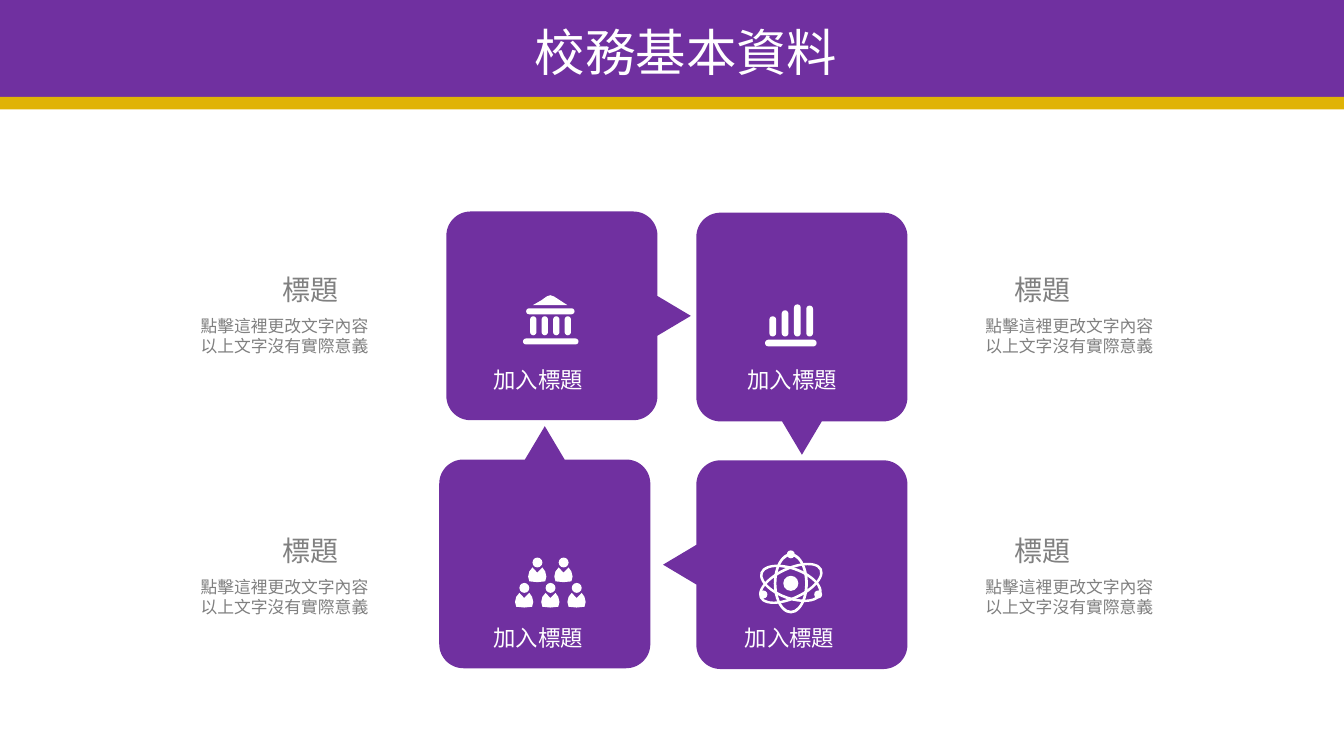
import math
from pptx import Presentation
from pptx import util as u
from pptx.dml.color import RGBColor
from pptx.enum import shapes, text
from pptx.oxml.ns import qn

PURPLE, GOLD, WHITE, GREY = "7030A0", "E0B305", "FFFFFF", "808080"
FONT = "Noto Sans CJK SC"
KIND = shapes.MSO_SHAPE
TILE_W, TILE_H, CORNER = 5.32, 5.26, 0.61
POINTER_LENGTH, POINTER_HALF = 0.84, 0.5
SIDES = ("up", "right", "down", "left")


def paint(shape, color):
    shape.shadow.inherit = False
    shape.fill.solid()
    shape.fill.fore_color.rgb = RGBColor.from_string(color)
    shape.line.fill.background()


def add_preset(slide, kind, x, y, w, h, color=WHITE, adjust=None, turn=0):
    shape = slide.shapes.add_shape(kind, u.Cm(x), u.Cm(y), u.Cm(w), u.Cm(h))
    paint(shape, color)
    if adjust is not None:
        shape.adjustments[0] = adjust
    shape.rotation = turn


def add_pill(slide, x, y, w, h):
    add_preset(slide, KIND.ROUNDED_RECTANGLE, x, y, w, h, adjust=0.5)


def add_outline(slide, x, y, points, color=WHITE):
    """Draw a closed outline whose points are relative to (x, y)."""
    corners = [(u.Cm(x + px), u.Cm(y + py)) for px, py in points]
    builder = slide.shapes.build_freeform(*corners[0])
    builder.add_line_segments(corners[1:], close=True)
    paint(builder.convert_to_shape(), color)


def add_text(slide, words, x, y, w, h, *, size, color, align="LEFT",
             anchor="TOP", inset=(0.2, 0.1), wrap=False):
    frame = slide.shapes.add_textbox(u.Cm(x), u.Cm(y), u.Cm(w), u.Cm(h)).text_frame
    frame.word_wrap = wrap
    frame.vertical_anchor = getattr(text.MSO_ANCHOR, anchor)
    frame.margin_left = frame.margin_right = u.Cm(inset[0])
    frame.margin_top = frame.margin_bottom = u.Cm(inset[1])
    frame.text = words
    for line in frame.paragraphs:
        line.alignment = getattr(text.PP_ALIGN, align)
        line.line_spacing = u.Pt(size * 1.2)
        for run in line.runs:
            run.font.size = u.Pt(size)
            run.font.color.rgb = RGBColor.from_string(color)
            run.font.name = FONT
            east_asian = run.font._element.makeelement(qn("a:ea"), {"typeface": FONT})
            run.font._element.append(east_asian)


def add_header(slide, width):
    add_preset(slide, KIND.RECTANGLE, 0, -0.05, width, 2.51, PURPLE)
    add_preset(slide, KIND.RECTANGLE, 0, 2.44, width, 0.32, GOLD)
    add_text(slide, "校務基本資料", 2.29, 0.51, 30, 1.55, size=36, color=WHITE,
             align="CENTER", anchor="MIDDLE", inset=(0, 0), wrap=True)


def tile_points(direction):
    """Rounded rectangle, clockwise, with a pointer in the middle of one side."""
    middle_x, middle_y = TILE_W / 2, TILE_H / 2
    points = []
    for i, side in enumerate(SIDES):
        angle = math.radians(90 * i - 90)
        out_x, out_y = round(math.cos(angle)), round(math.sin(angle))
        along_x, along_y = -out_y, out_x
        if side == direction:
            edge_x, edge_y = middle_x * (1 + out_x), middle_y * (1 + out_y)
            for along, out in ((-POINTER_HALF, 0), (0, POINTER_LENGTH), (POINTER_HALF, 0)):
                points.append((edge_x + along * along_x + out * out_x,
                               edge_y + along * along_y + out * out_y))
        center_x = middle_x + (out_x + along_x) * (middle_x - CORNER)
        center_y = middle_y + (out_y + along_y) * (middle_y - CORNER)
        for step in range(0, 91, 6):
            turn = angle + math.radians(step)
            points.append((center_x + CORNER * math.cos(turn),
                           center_y + CORNER * math.sin(turn)))
    return points


def add_bank(slide, x, y):
    add_pill(slide, x, y + 1.09, 1.4, 0.15)
    for i in range(4):
        add_pill(slide, x + 0.18 + 0.29 * i, y + 0.53, 0.16, 0.48)
    add_outline(slide, x, y, [(0.25, 0.25), (0.46, 0.13), (0.6, 0.03), (0.69, 0),
                              (0.78, 0.03), (1.12, 0.25)])
    add_pill(slide, x + 0.08, y + 0.33, 1.22, 0.15)


def add_bars(slide, x, y):
    add_pill(slide, x, y + 0.89, 1.3, 0.17)
    for i, top in enumerate((0.3, 0.15, 0, 0.03)):
        add_pill(slide, x + 0.11 + 0.31 * i, y + top, 0.17, 0.81 - top)


def add_people(slide, x, y):
    body = [(0.36, 0.25), (0.23, 0.38), (0.11, 0.25), (0.03, 0.35), (0, 0.48),
            (0.03, 0.6), (0.23, 0.62), (0.43, 0.6), (0.46, 0.48), (0.43, 0.35)]
    for count, indent, drop in ((2, 0.33, 0), (3, 0, 0.64)):
        for i in range(count):
            left = x + indent + 0.66 * i
            add_preset(slide, KIND.OVAL, left + 0.11, y + drop, 0.25, 0.25)
            add_outline(slide, left, y + drop, body)


def add_atom(slide, x, y):
    center_x, center_y = x + 0.8, y + 0.83
    for w, h, turn in ((0.86, 1.52, 0), (1.73, 0.81, -25), (1.63, 0.81, 20)):
        add_preset(slide, KIND.DONUT, center_x - w / 2, center_y - h / 2, w, h,
                   adjust=0.08, turn=turn)
    for dx, dy, size in ((0, 0, 0.38), (0.69, 0.28, 0.2), (-0.69, 0.28, 0.2), (0, -0.73, 0.2)):
        add_preset(slide, KIND.OVAL, center_x + dx - size / 2,
                   center_y + dy - size / 2, size, size)


def add_tile(slide, x, y, direction, add_icon, icon_at, label_at):
    add_outline(slide, x, y, tile_points(direction), PURPLE)
    add_icon(slide, x + icon_at[0], y + icon_at[1])
    add_text(slide, "加入標題", x + label_at[0], y + label_at[1], 2.69, 0.89,
             size=16, color=WHITE)


def add_caption(slide, x, y, heading_indent):
    add_text(slide, "標題", x + heading_indent, y, 1.83, 1.07, size=20,
             color=GREY, align="CENTER")
    add_text(slide, "點擊這裡更改文字內容\n以上文字沒有實際意義", x, y + 1.07, 5.44, 1.27,
             size=12, color=GREY, align="CENTER", inset=(0.25, 0.13), wrap=True)


def main():
    deck = Presentation()
    deck.slide_width, deck.slide_height = u.Cm(33.87), u.Cm(19.05)
    slide = deck.slides.add_slide(deck.slide_layouts[6])
    add_header(slide, 33.87)
    add_tile(slide, 11.25, 5.33, "right", add_bank, (1.93, 2.11), (0.99, 3.79))
    add_tile(slide, 17.55, 5.36, "down", add_bars, (1.73, 2.31), (1.09, 3.76))
    add_tile(slide, 11.07, 11.58, "up", add_people, (1.91, 2.47), (1.17, 4.04))
    add_tile(slide, 17.55, 11.6, "left", add_atom, (1.58, 2.27), (1.02, 4.02))
    for x, heading_indent in ((4.45, 2.46), (24.23, 1.14)):
        for y in (6.76, 13.34):
            add_caption(slide, x, y, heading_indent)
    deck.save("out.pptx")


if __name__ == "__main__":
    main()
